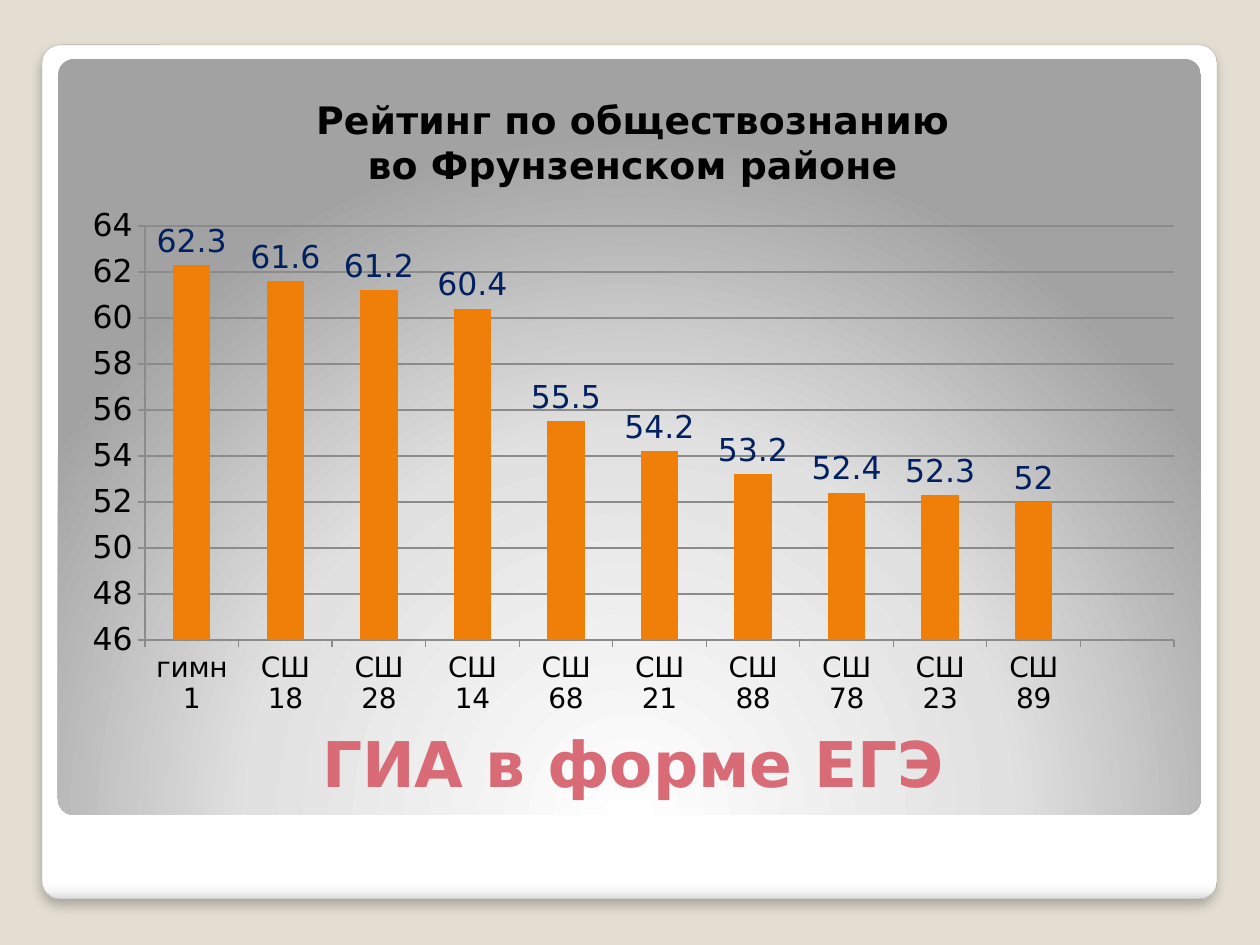
from pptx import Presentation
from pptx.chart.data import CategoryChartData
from pptx.dml.color import RGBColor
from pptx.enum.chart import XL_CHART_TYPE, XL_LABEL_POSITION, XL_TICK_MARK
from pptx.enum.shapes import MSO_SHAPE
from pptx.enum.text import MSO_ANCHOR, PP_ALIGN
from pptx.oxml import parse_xml
from pptx.oxml.ns import nsdecls, qn
from pptx.util import Pt

ROUNDED = MSO_SHAPE.ROUNDED_RECTANGLE
COLUMNS = XL_CHART_TYPE.COLUMN_CLUSTERED
OUTSIDE = XL_LABEL_POSITION.OUTSIDE_END
CROSS, OUTWARD = XL_TICK_MARK.CROSS, XL_TICK_MARK.OUTSIDE
BOTTOM, CENTER = MSO_ANCHOR.BOTTOM, PP_ALIGN.CENTER

SCALE = 914400 / 126
FONT = "DejaVu Sans"
GRID = "8B8B8B"

FRAME_STOPS = [(0, "FFFFFF"), (98, "FFFFFF"), (99, "F7F7F7"), (100, "DADADA")]
PANEL_STOPS = [(0, "FFFFFF"), (55, "E1E1E1"), (100, "A2A2A2")]
DOWNWARD = '<a:lin ang="5400000" scaled="0"/>'
FROM_BELOW = ('<a:path path="circle"><a:fillToRect l="50000" t="175000" '
              'r="50000" b="-75000"/></a:path>')
SHADOW = ('<a:effectLst {}><a:outerShdw blurRad="76200" dist="50800" dir="5400000" '
          'algn="t" rotWithShape="0"><a:srgbClr val="000000"><a:alpha val="25000"/>'
          '</a:srgbClr></a:outerShdw></a:effectLst>')

SCORES = {"гимн 1": 62.3, "СШ 18": 61.6, "СШ 28": 61.2, "СШ 14": 60.4,
          "СШ 68": 55.5, "СШ 21": 54.2, "СШ 88": 53.2, "СШ 78": 52.4,
          "СШ 23": 52.3, "СШ 89": 52, "": None}


def px(length):
    return round(length * SCALE)


def emu(box):
    return [px(length) for length in box]


def colour(code):
    return RGBColor.from_string(code)


def set_values(target, values):
    for name, value in values.items():
        setattr(target, name, value)


def set_font(font, size, code, bold=False):
    set_values(font, {"name": FONT, "size": Pt(size), "bold": bold})
    font.color.rgb = colour(code)


def set_line(line, code, width):
    line.color.rgb = colour(code)
    line.width = Pt(width)


def add_panel(page, box, stops, direction):
    panel = page.shapes.add_shape(ROUNDED, *emu(box))
    panel.adjustments[0] = 0.021
    panel.shadow.inherit = False
    panel.line.fill.background()
    panel.fill.gradient()
    marks = "".join(f'<a:gs pos="{stop * 1000}"><a:srgbClr val="{code}"/></a:gs>'
                    for stop, code in stops)
    gradient = parse_xml(f'<a:gradFill {nsdecls("a")} rotWithShape="1">'
                         f'<a:gsLst>{marks}</a:gsLst>{direction}</a:gradFill>')
    properties = panel.element.spPr
    properties.replace(properties.find(qn("a:gradFill")), gradient)
    return panel


def add_background(page, box):
    left, top, width, height = box
    frame = add_panel(page, box, FRAME_STOPS, DOWNWARD)
    set_line(frame.line, "A4A4A4", 0.16)
    properties = frame.element.spPr
    properties.replace(properties.find(qn("a:effectLst")),
                       parse_xml(SHADOW.format(nsdecls("a"))))
    inner = (left + 16, top + 14, width - 32, height - 98)
    add_panel(page, inner, PANEL_STOPS, FROM_BELOW)


def add_heading(page, box, text):
    frame = page.shapes.add_textbox(*emu(box)).text_frame
    set_values(frame, {"word_wrap": True, "vertical_anchor": BOTTOM})
    para = frame.paragraphs[0]
    para.alignment = CENTER
    span = para.add_run()
    span.text = text
    set_font(span.font, 36, "D96B77", True)


def add_title(chart, text):
    chart.has_title = True
    frame = chart.chart_title.text_frame
    frame.text = text
    for para in frame.paragraphs:
        set_font(para.runs[0].font, 21.6, "000000", True)
    chart.chart_title.include_in_layout = False


def place_plot(chart, box, plot):
    left, top, width, height = box
    shares = {"x": (plot[0] - left) / width, "y": (plot[1] - top) / height,
              "w": plot[2] / width, "h": plot[3] / height}
    modes = "".join(f'<c:{side}Mode val="edge"/>' for side in "xy")
    sizes = "".join(f'<c:{side} val="{share:.4f}"/>' for side, share in shares.items())
    layout = parse_xml(f'<c:layout {nsdecls("c")}><c:manualLayout>'
                       f'<c:layoutTarget val="inner"/>{modes}{sizes}'
                       '</c:manualLayout></c:layout>')
    area = chart.element.find(".//" + qn("c:plotArea"))
    for old in area.findall(qn("c:layout")):
        area.remove(old)
    area.insert(0, layout)


def add_rating(page, box, title):
    left, top, width, height = box
    data = CategoryChartData()
    data.categories = list(SCORES)
    data.add_series("Series 1", list(SCORES.values()))
    chart = page.shapes.add_chart(COLUMNS, *emu(box), data).chart
    chart.has_legend = False
    set_font(chart.font, 18, "000000")
    add_title(chart, title)
    place_plot(chart, box, (left + 76, top + 153, width - 99, height - 241))

    plot = chart.plots[0]
    set_values(plot, {"gap_width": 150, "vary_by_categories": False,
                      "has_data_labels": True})
    fill = plot.series[0].format.fill
    fill.solid()
    fill.fore_color.rgb = colour("F07F09")
    set_values(plot.data_labels, {"show_value": True, "position": OUTSIDE})
    set_font(plot.data_labels.font, 18, "002060")

    set_values(chart.value_axis, {"minimum_scale": 46, "maximum_scale": 64,
                                  "major_unit": 2, "has_major_gridlines": True})
    set_line(chart.value_axis.major_gridlines.format.line, GRID, 0.75)
    for axis, size in ((chart.category_axis, 16), (chart.value_axis, 18)):
        set_values(axis, {"major_tick_mark": OUTWARD, "minor_tick_mark": XL_TICK_MARK.NONE})
        set_font(axis.tick_labels.font, size, "000000")
        set_line(axis.format.line, GRID, 0.75)


def main():
    deck = Presentation()
    set_values(deck, {"slide_width": px(1260), "slide_height": px(945)})
    page = deck.slides.add_slide(deck.slide_layouts[6])
    page.background.fill.solid()
    page.background.fill.fore_color.rgb = colour("E3DED1")
    add_background(page, (42, 45, 1175, 854))
    add_heading(page, (69, 659, 1128, 147), "ГИА в форме ЕГЭ")
    add_rating(page, (69, 73, 1128, 655),
               "Рейтинг по обществознанию\nво Фрунзенском районе")
    deck.save("out.pptx")


if __name__ == "__main__":
    main()
